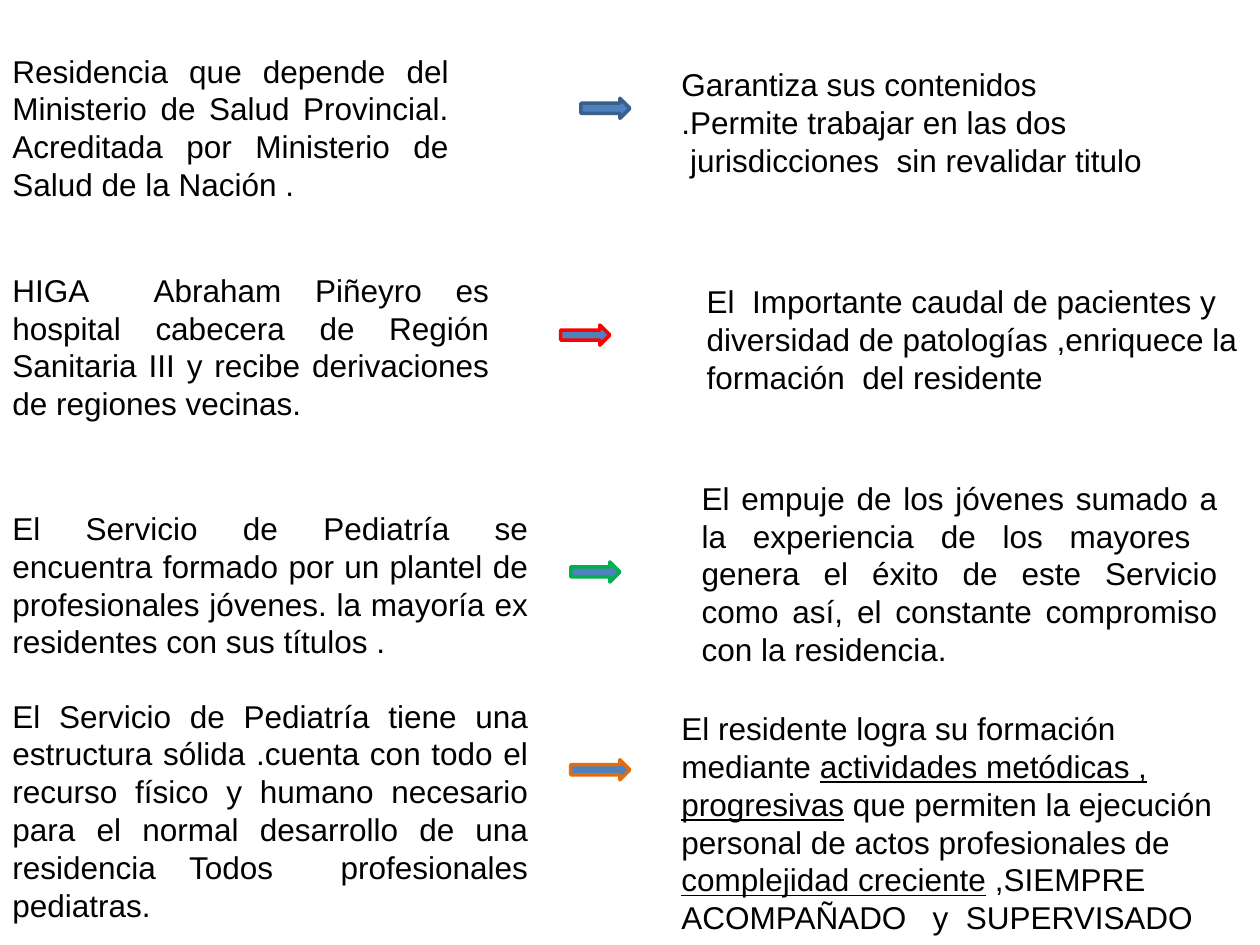
from dataclasses import dataclass

from pptx import Presentation
from pptx.dml.color import RGBColor
from pptx.enum.shapes import MSO_SHAPE
from pptx.enum.text import MSO_ANCHOR, PP_ALIGN
from pptx.util import Inches, Pt


@dataclass(frozen=True)
class Theme:
    """Colours, font and sizes of the slide."""
    font: str = "Arial"
    size: int = 18
    text: str = "000000"
    fill: str = "4F81BD"
    blue: str = "3A5F8C"
    red: str = "FF0000"
    green: str = "00B050"
    orange: str = "E46C0A"
    line: int = 2
    arrow_height: float = 0.16


class SlideBuilder:
    """Draws styled elements on the current slide."""

    def __init__(self, s, theme):
        self.s = s
        self.theme = theme

    def text(self, x, y, w, h, paragraphs, align=PP_ALIGN.LEFT):
        """Add a text box; each paragraph is a list of (text, underlined) runs."""
        tf = self.s.shapes.add_textbox(Inches(x), Inches(y), Inches(w), Inches(h)).text_frame
        tf.word_wrap = True
        tf.vertical_anchor = MSO_ANCHOR.TOP
        for i, runs in enumerate(paragraphs):
            p = tf.add_paragraph() if i else tf.paragraphs[0]
            p.alignment = align
            for text, underlined in runs:
                r = p.add_run()
                r.text = text
                r.font.name = self.theme.font
                r.font.size = Pt(self.theme.size)
                r.font.color.rgb = RGBColor.from_string(self.theme.text)
                if underlined:
                    r.font.underline = True

    def arrow(self, x, y, w, colour):
        """Add a right block arrow with a coloured outline."""
        sp = self.s.shapes.add_shape(MSO_SHAPE.RIGHT_ARROW, Inches(x), Inches(y),
                                     Inches(w), Inches(self.theme.arrow_height))
        sp.shadow.inherit = False
        sp.fill.solid()
        sp.fill.fore_color.rgb = RGBColor.from_string(self.theme.fill)
        sp.line.color.rgb = RGBColor.from_string(colour)
        sp.line.width = Pt(self.theme.line)


def plain(*lines):
    """Turn lines into paragraphs of one plain run."""
    return [[(line, False)] for line in lines]


def main():
    """Build the slide and save it."""
    prs = Presentation()
    prs.slide_width, prs.slide_height = Inches(10), Inches(7.5)
    theme = Theme()
    b = SlideBuilder(prs.slides.add_slide(prs.slide_layouts[6]), theme)
    left, justify = PP_ALIGN.LEFT, PP_ALIGN.JUSTIFY

    strengths = [
        (0.36, 3.66, 1.31, "Residencia que depende del Ministerio de Salud Provincial. "
         "Acreditada por Ministerio de Salud de la Nación ."),
        (2.1, 3.98, 1.31, "HIGA  Abraham Piñeyro es hospital cabecera de Región "
         "Sanitaria III y recibe derivaciones de regiones vecinas."),
        (3.99, 4.29, 1.31, "El Servicio de Pediatría se encuentra formado por un plantel de "
         "profesionales jóvenes. la mayoría ex residentes con sus títulos ."),
        (5.48, 4.29, 1.92, "El Servicio de Pediatría tiene una estructura sólida .cuenta con "
         "todo el recurso físico y humano necesario para el normal desarrollo de una "
         "residencia Todos  profesionales pediatras."),
    ]
    arrows = [
        (4.61, 0.78, 0.39, theme.blue),
        (4.45, 2.58, 0.39, theme.red),
        (4.53, 4.46, 0.39, theme.green),
        (4.53, 6.03, 0.47, theme.orange),
    ]
    training = [
        ("El residente logra su formación  mediante ", False),
        ("actividades metódicas , progresivas", True),
        (" que permiten la ejecución personal de actos profesionales de ", False),
        ("complejidad creciente", True),
        (" ,SIEMPRE ACOMPAÑADO   y  SUPERVISADO", False),
    ]
    results = [
        (5.31, 0.47, 4.69, 1.01, plain("Garantiza sus contenidos", ".Permite trabajar en las dos",
                                       " jurisdicciones  sin revalidar titulo"), left),
        (5.51, 2.19, 4.49, 1.01, plain("El  Importante caudal de pacientes y diversidad de "
                                       "patologías ,enriquece la formación  del residente"), left),
        (5.47, 3.75, 4.29, 1.62, plain("El empuje de los jóvenes sumado a la experiencia de los "
                                       "mayores  genera el éxito de este Servicio como así, el "
                                       "constante compromiso con la residencia."), justify),
        (5.31, 5.58, 4.69, 1.92, [training], left),
    ]
    for (y, w, h, strength), arrow, result in zip(strengths, arrows, results):
        b.text(0, y, w, h, plain(strength), justify)
        b.arrow(*arrow)
        b.text(*result)

    prs.save("out.pptx")


if __name__ == "__main__":
    main()
